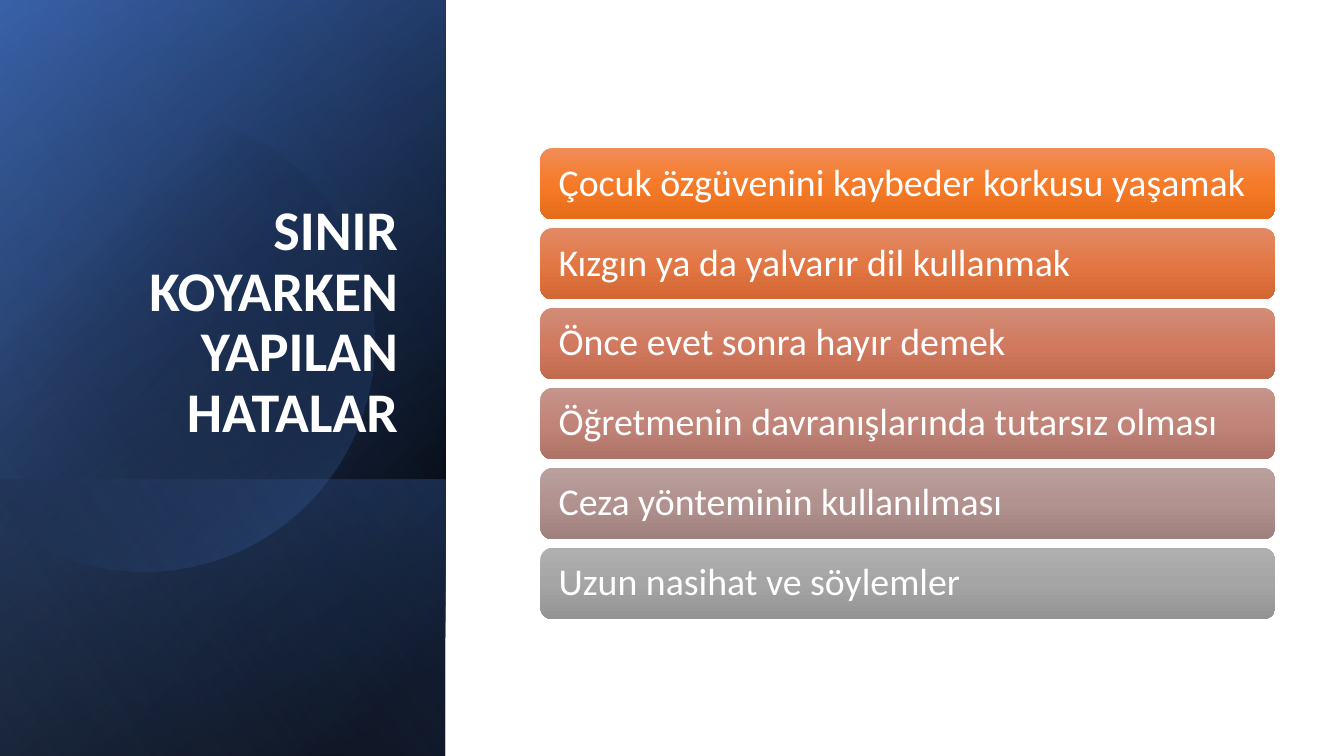
from math import acos, cos, sin

from pptx import Presentation
from pptx.dml.color import RGBColor
from pptx.enum.shapes import MSO_SHAPE
from pptx.enum.text import MSO_ANCHOR, MSO_AUTO_SIZE, PP_ALIGN
from pptx.oxml import parse_xml
from pptx.oxml.ns import nsdecls, qn
from pptx.util import Pt

COLORS = {
    "white": "FFFFFF",
    "black": "000000",
    "blue": "4472C4",
    "deep_blue": "2F5597",
    "pale_blue": "8FAADC",
}
FONT = "Calibri"
PANEL_WIDTH = 318.2
SLIDE_HEIGHT = 540
LOWER_TOP = 342.7

BAR_LEFT, BAR_TOP, BAR_WIDTH, BAR_HEIGHT = 386, 105.8, 525, 51
BAR_PITCH = 57.1
MISTAKES = [
    ("Çocuk özgüvenini kaybeder korkusu yaşamak", ("F18C57", "F67B28", "E56C19")),
    ("Kızgın ya da yalvarır dil kullanmak", ("E18A66", "E37744", "D26734")),
    ("Önce evet sonra hayır demek", ("D28C78", "D17A5F", "C06A4E")),
    ("Öğretmenin davranışlarında tutarsız olması", ("C5948B", "C18478", "AF7267")),
    ("Ceza yönteminin kullanılması", ("B9A09D", "B2928F", "A0807D")),
    ("Uzun nasihat ve söylemler", ("AFAFAF", "A5A5A5", "939393")),
]


def paint_gradient(shape, stops, angle):
    """Fill with (position %, colour, opacity %) stops and remove line and shadow."""
    shape.shadow.inherit = False
    shape.line.fill.background()
    shape.fill.background()
    stop_xml = "".join(
        f'<a:gs pos="{position * 1000}"><a:srgbClr val="{color}">'
        f'<a:alpha val="{opacity * 1000}"/></a:srgbClr></a:gs>'
        for position, color, opacity in stops
    )
    gradient = parse_xml(
        f'<a:gradFill {nsdecls("a")} rotWithShape="1"><a:gsLst>{stop_xml}</a:gsLst>'
        f'<a:lin ang="{angle * 60000}" scaled="0"/></a:gradFill>'
    )
    properties = shape.element.spPr
    properties.replace(properties.find(qn("a:noFill")), gradient)


def add_panel(page, top, stops, angle):
    """Add a mirrored rectangle, turned a quarter, from top to the slide's foot."""
    height = SLIDE_HEIGHT - top
    shift = (PANEL_WIDTH - height) / 2
    panel = page.shapes.add_shape(
        MSO_SHAPE.RECTANGLE, Pt(shift), Pt(top - shift), Pt(height), Pt(PANEL_WIDTH)
    )
    panel.rotation = 90
    panel.element.spPr.find(qn("a:xfrm")).set("flipH", "1")
    paint_gradient(panel, stops, angle)


def add_disc(page, stops, angle):
    """Add a disc whose left part is cut off by a vertical edge."""
    center_x, center_y, radius, edge = 103, 243.7, 164.7, -10.8
    limit = acos((edge - center_x) / radius)
    steps = 120
    turns = [limit * (2 * step / steps - 1) for step in range(steps + 1)]
    points = [
        (Pt(center_x + radius * cos(turn)), Pt(center_y + radius * sin(turn)))
        for turn in turns
    ]
    builder = page.shapes.build_freeform(*points[0])
    builder.add_line_segments(points[1:], close=True)
    paint_gradient(builder.convert_to_shape(), stops, angle)


def write_text(shape, text, size, align, bold=False):
    para = shape.text_frame.paragraphs[0]
    para.alignment = align
    para.line_spacing = 0.9
    span = para.add_run()
    span.text = text
    span.font.name = FONT
    span.font.size = Pt(size)
    span.font.bold = bold
    span.font.color.rgb = RGBColor.from_string(COLORS["white"])


def place_title(page, text):
    title = page.shapes.title
    title.left, title.top, title.width, title.height = Pt(46), Pt(132.5), Pt(245.5), Pt(188.6)
    frame = title.text_frame
    frame.word_wrap = True
    frame.auto_size = MSO_AUTO_SIZE.NONE
    frame.vertical_anchor = MSO_ANCHOR.BOTTOM
    write_text(title, text, 40, PP_ALIGN.RIGHT, bold=True)
    # Bring the title in front of the panels
    title.element.getparent().append(title.element)


def add_bar(page, top, text, shades):
    bar = page.shapes.add_shape(
        MSO_SHAPE.ROUNDED_RECTANGLE, Pt(BAR_LEFT), Pt(top), Pt(BAR_WIDTH), Pt(BAR_HEIGHT)
    )
    paint_gradient(bar, [(50 * i, shade, 100) for i, shade in enumerate(shades)], 90)
    frame = bar.text_frame
    frame.word_wrap = True
    frame.vertical_anchor = MSO_ANCHOR.MIDDLE
    frame.margin_left = frame.margin_right = Pt(10.6)
    frame.margin_top = frame.margin_bottom = Pt(8)
    write_text(bar, text, 27, PP_ALIGN.LEFT)


def main():
    deck = Presentation()
    deck.slide_width, deck.slide_height = Pt(960), Pt(SLIDE_HEIGHT)
    page = deck.slides.add_slide(deck.slide_layouts[5])

    black, blue = COLORS["black"], COLORS["blue"]
    add_panel(page, 0, [(8, black, 100), (100, COLORS["deep_blue"], 100)], 50)
    add_panel(page, 0, [(0, black, 0), (99, blue, 46)], 30)
    add_panel(page, LOWER_TOP, [(2, blue, 29), (100, black, 30)], 130)
    add_disc(page, [(29, black, 0), (100, blue, 43)], 45)
    add_panel(page, 0, [(0, black, 0), (99, COLORS["pale_blue"], 11)], 120)

    place_title(page, "SINIR KOYARKEN YAPILAN HATALAR")
    for row, (text, shades) in enumerate(MISTAKES):
        add_bar(page, BAR_TOP + row * BAR_PITCH, text, shades)
    deck.save("out.pptx")


if __name__ == "__main__":
    main()
